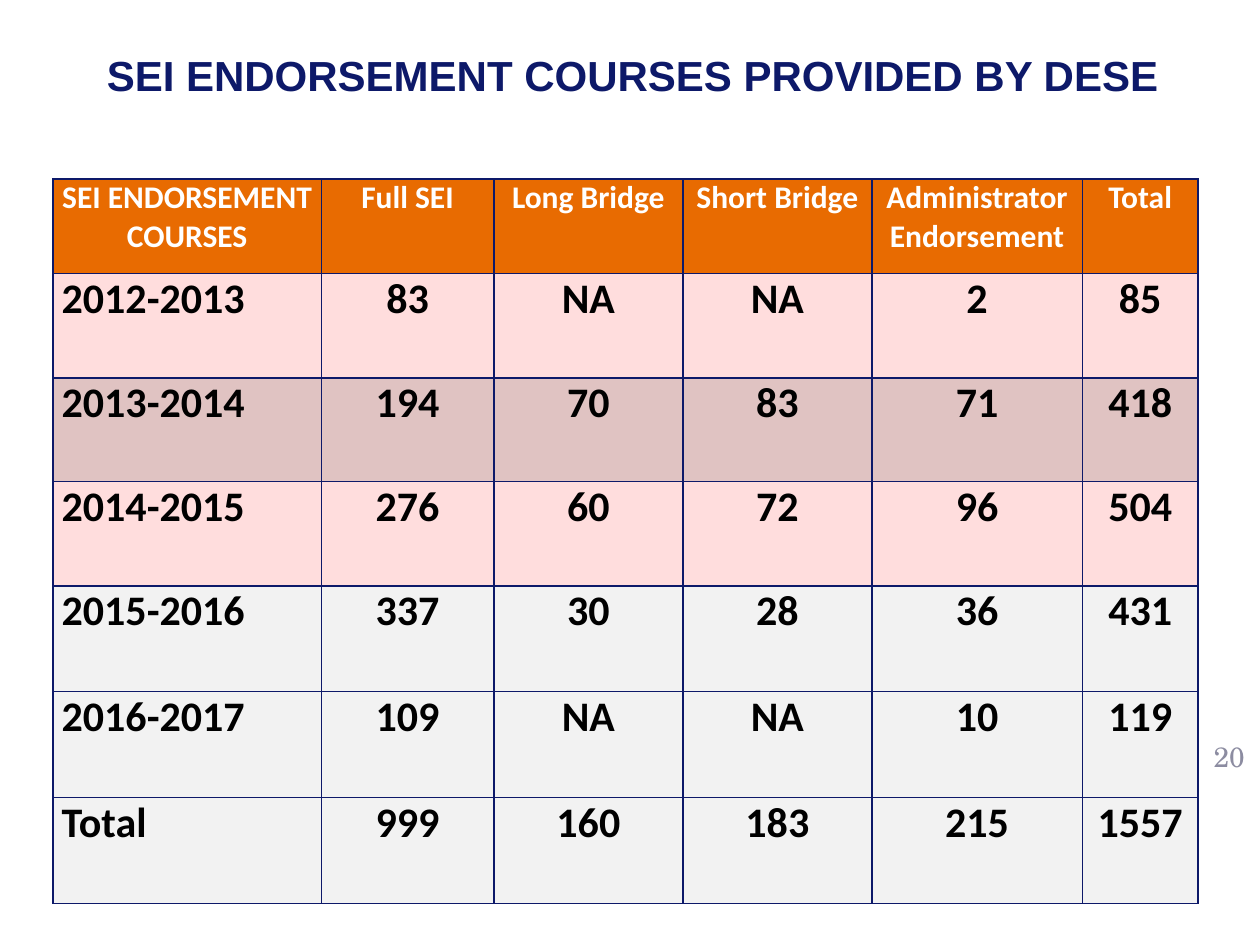
from dataclasses import dataclass

from lxml.etree import SubElement
from pptx import Presentation
from pptx.dml.color import RGBColor
from pptx.enum.text import MSO_ANCHOR, PP_ALIGN
from pptx.oxml.ns import qn
from pptx.util import Inches, Pt

NAVY = "0D1969"
WHITE = "FFFFFF"
BLACK = "000000"
ORANGE = "E86B01"
PINK = "FFDDDD"
ROSE = "E0C3C2"
GREY = "F2F2F2"


@dataclass
class Row:
    cells: list[str]
    fill: str
    high: float = 0.83
    size: int = 24
    color: str = BLACK
    first: PP_ALIGN = PP_ALIGN.LEFT


WIDTHS = [2.13, 1.37, 1.5, 1.5, 1.67, 0.92]
ROWS = [
    Row(["SEI ENDORSEMENT\nCOURSES", "Full SEI", "Long Bridge", "Short Bridge",
         "Administrator Endorsement", "Total"],
        ORANGE, 0.75, 18, WHITE, PP_ALIGN.CENTER),
    Row(["2012-2013", "83", "NA", "NA", "2", "85"], PINK),
    Row(["2013-2014", "194", "70", "83", "71", "418"], ROSE, 0.82),
    Row(["2014-2015", "276", "60", "72", "96", "504"], PINK),
    Row(["2015-2016", "337", "30", "28", "36", "431"], GREY, 0.84),
    Row(["2016-2017", "109", "NA", "NA", "10", "119"], GREY, 0.84),
    Row(["Total", "999", "160", "183", "215", "1557"], GREY, 0.84),
]


def paint(target, color: str) -> None:
    target.rgb = RGBColor.from_string(color)


def write(frame, text: str, *, size: int, color: str, font: str,
          bold: bool = False, align: PP_ALIGN = PP_ALIGN.LEFT) -> None:
    frame.text = text
    for para in frame.paragraphs:
        para.alignment = align
        for run in para.runs:
            run.font.size = Pt(size)
            run.font.name = font
            run.font.bold = bold
            paint(run.font.color, color)


def label(slide, box: tuple, text: str, *, wrap: bool, **style) -> None:
    frame = slide.shapes.add_textbox(*map(Inches, box)).text_frame
    frame.word_wrap = wrap
    frame.vertical_anchor = MSO_ANCHOR.MIDDLE
    write(frame, text, **style)


def border(cell, color: str, width: float) -> None:
    props = cell._tc.get_or_add_tcPr()
    for spot, side in enumerate(("a:lnL", "a:lnR", "a:lnT", "a:lnB")):
        line = SubElement(props, qn(side), w=str(Pt(width)))
        fill = SubElement(line, qn("a:solidFill"))
        SubElement(fill, qn("a:srgbClr"), val=color)
        props.insert(spot, line)


def grid(slide, left: float, top: float, rows: list[Row]) -> None:
    size = sum(WIDTHS), sum(row.high for row in rows)
    table = slide.shapes.add_table(
        len(rows), len(WIDTHS), *map(Inches, (left, top, *size))).table
    table.first_row = table.horz_banding = False
    for col, width in zip(table.columns, WIDTHS):
        col.width = Inches(width)
    for y, row in enumerate(rows):
        table.rows[y].height = Inches(row.high)
        for x, text in enumerate(row.cells):
            cell = table.cell(y, x)
            cell.margin_left = cell.margin_right = Inches(0.07)
            cell.margin_top = cell.margin_bottom = 0
            cell.fill.solid()
            paint(cell.fill.fore_color, row.fill)
            border(cell, NAVY, 1)
            write(cell.text_frame, text, size=row.size, color=row.color,
                  font="Calibri", bold=True,
                  align=PP_ALIGN.CENTER if x else row.first)


def main() -> None:
    deck = Presentation()
    deck.slide_width, deck.slide_height = Inches(10), Inches(7.5)
    slide = deck.slides.add_slide(deck.slide_layouts[6])
    grid(slide, 0.42, 1.42, ROWS)
    label(slide, (9.51, 5.75, 0.49, 0.5), "20", wrap=True, size=16,
          color="8C8CA1", font="TeX Gyre Schola", align=PP_ALIGN.CENTER)
    label(slide, (0.75, 0.31, 8.63, 0.56),
          "SEI ENDORSEMENT COURSES PROVIDED BY DESE", wrap=False,
          size=24, color=NAVY, font="Arial", bold=True)
    deck.save("out.pptx")


if __name__ == "__main__":
    main()
